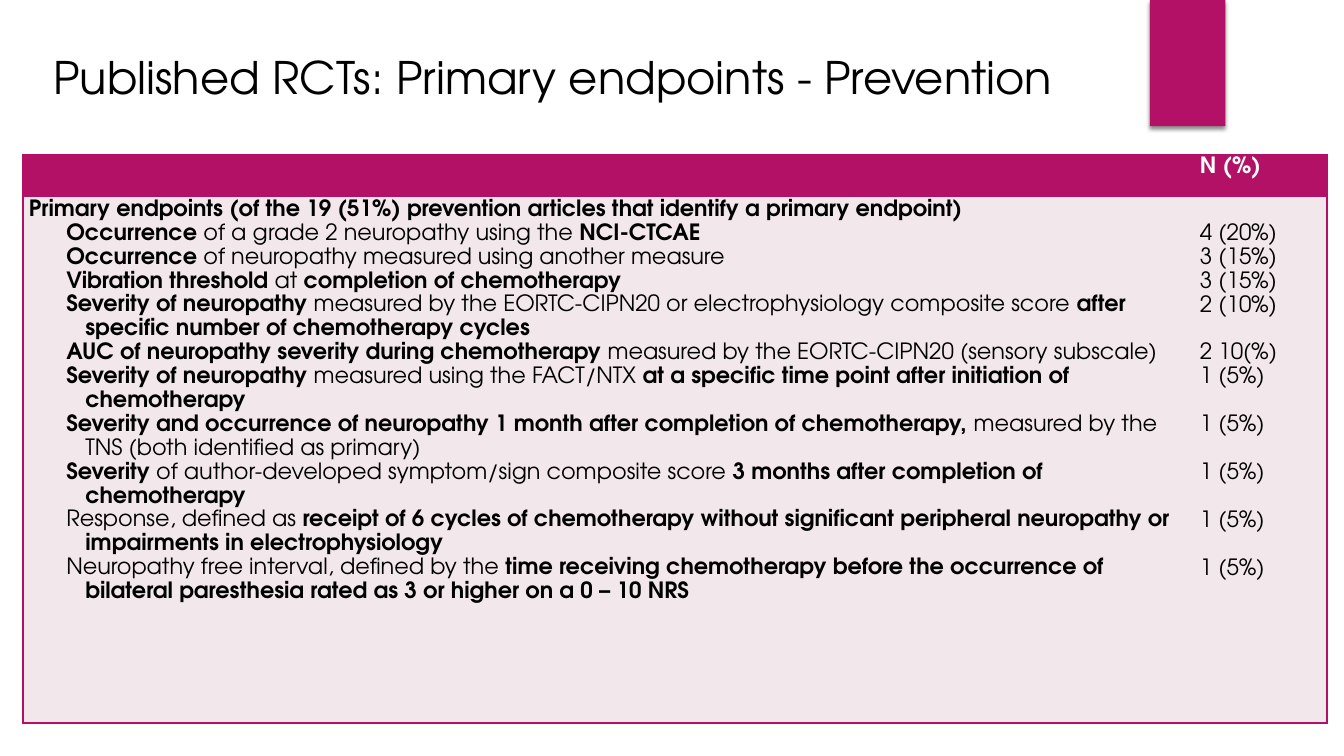
from lxml import etree
from pptx import Presentation
from pptx.dml.color import RGBColor
from pptx.enum.shapes import MSO_SHAPE
from pptx.enum.text import MSO_ANCHOR, PP_ALIGN
from pptx.oxml.ns import qn
from pptx.util import Cm, Pt

RECT = MSO_SHAPE.RECTANGLE
MIDDLE = MSO_ANCHOR.MIDDLE
LEFT = PP_ALIGN.LEFT

FONT = "TeX Gyre Adventor"
PINK, PALE, BLACK, WHITE = "B31166", "F2E7EA", "000000", "FFFFFF"
LINE = 17.1  # height of one table line in points

HEAD = "*Primary endpoints (of the 19 (51%) prevention articles that identify a primary endpoint)*"
# Wording with bold between asterisks, count, and lines the wording takes
ENDPOINTS = [
    ("*Occurrence *of a grade 2 neuropathy using the *NCI-CTCAE*", "4 (20%)", 1),
    ("*Occurrence *of neuropathy measured using another measure", "3 (15%)", 1),
    ("*Vibration threshold *at *completion of chemotherapy*", "3 (15%)", 1),
    ("*Severity of neuropathy *measured by the EORTC-CIPN20 or electrophysiology "
     "composite score *after specific number of chemotherapy cycles*", "2 (10%)", 2),
    ("*AUC of neuropathy severity during chemotherapy *measured by the "
     "EORTC-CIPN20 (sensory subscale)", "2 10(%)", 1),
    ("*Severity of neuropathy *measured using the FACT/NTX* at a specific time point "
     "after initiation of chemotherapy*", "1 (5%)", 2),
    ("*Severity and occurrence of neuropathy 1 month after completion of "
     "chemotherapy, *measured by the TNS (both identified as primary)", "1 (5%)", 2),
    ("*Severity *of author-developed symptom/sign composite score *3 months after "
     "completion of chemotherapy*", "1 (5%)", 2),
    ("Response, defined as *receipt of 6 cycles of chemotherapy without significant "
     "peripheral neuropathy or impairments in electrophysiology*", "1 (5%)", 2),
    ("Neuropathy free interval, defined by the *time receiving chemotherapy before the "
     "occurrence of bilateral paresthesia rated as 3 or higher on a 0 – 10 NRS*", "1 (5%)", 2),
]


def rgb(code):
    return RGBColor.from_string(code)


def write(frame, text, size=16, color=BLACK, first=False, spacing=1.15, before=0, hang=False):
    """Add one paragraph; asterisks switch bold on and off."""
    para = frame.paragraphs[0] if first else frame.add_paragraph()
    para.alignment = LEFT
    para.line_spacing = spacing
    para.space_before = Pt(before)
    if hang:
        props = para._p.get_or_add_pPr()
        props.set("marL", str(Cm(1.42)))
        props.set("indent", str(Cm(-0.48)))
    for i, part in enumerate(text.split("*")):
        if part:
            run = para.add_run()
            run.text = part
            font = run.font
            font.name, font.size, font.bold = FONT, Pt(size), i % 2 == 1
            font.color.rgb = rgb(color)


def paint(cell, fill, sides):
    """Fill a cell and rule only the named sides."""
    props = cell._tc.get_or_add_tcPr()
    for side in "LRTB":
        line = etree.SubElement(props, qn(f"a:ln{side}"), w=str(Pt(1)))
        if side in sides:
            solid = etree.SubElement(line, qn("a:solidFill"))
            etree.SubElement(solid, qn("a:srgbClr"), val=PINK)
        else:
            etree.SubElement(line, qn("a:noFill"))
    cell.fill.solid()
    cell.fill.fore_color.rgb = rgb(fill)
    cell.margin_left = cell.margin_right = Cm(0.15)
    cell.margin_top = cell.margin_bottom = 0


def add_tab(slide, left, top, width, height):
    tab = slide.shapes.add_shape(RECT, left, top, width, height)
    tab.fill.solid()
    tab.fill.fore_color.rgb = rgb(PINK)
    tab.line.fill.background()
    tab.shadow.inherit = False
    effects = tab._element.spPr.find(qn("a:effectLst"))
    shade = etree.SubElement(effects, qn("a:outerShdw"), blurRad=str(Pt(3)),
                             dist=str(Pt(2)), dir="5400000", rotWithShape="0")
    tint = etree.SubElement(shade, qn("a:srgbClr"), val=BLACK)
    etree.SubElement(tint, qn("a:alpha"), val="45000")


def add_title(slide, left, top, width, height):
    title = slide.shapes.title
    title.left, title.top, title.width, title.height = left, top, width, height
    frame = title.text_frame
    frame.word_wrap = True
    frame.vertical_anchor = MIDDLE
    write(frame, "Published RCTs: Primary endpoints - Prevention",
          size=32, first=True, spacing=1)


def add_grid(slide, left, top, width, height):
    table = slide.shapes.add_table(2, 2, left, top, width, height).table
    table.first_row = table.horz_banding = False
    table.columns[1].width = Cm(3.35)
    table.columns[0].width = width - Cm(3.35)
    table.rows[0].height = Cm(1.07)
    table.rows[1].height = height - Cm(1.07)
    for row, fill in enumerate((PINK, PALE)):
        for col, side in enumerate("LR"):
            paint(table.cell(row, col), fill, side + "TB")

    write(table.cell(0, 1).text_frame, "*N (%)*", color=WHITE, first=True)
    names, counts = table.cell(1, 0), table.cell(1, 1)
    counts.margin_top = Pt(LINE)
    write(names.text_frame, HEAD, first=True)
    gap = 0
    for i, (name, count, lines) in enumerate(ENDPOINTS):
        write(names.text_frame, name, hang=True)
        write(counts.text_frame, count, first=i == 0, before=gap)
        gap = (lines - 1) * LINE


def main():
    deck = Presentation()
    deck.slide_width, deck.slide_height = Cm(33.87), Cm(19.05)
    slide = deck.slides.add_slide(deck.slide_layouts[5])
    add_tab(slide, Cm(28.98), 0, Cm(1.9), Cm(3.18))
    add_grid(slide, Cm(0.58), Cm(3.89), Cm(32.86), Cm(14.33))
    add_title(slide, Cm(1.09), Cm(1.12), Cm(26.39), Cm(1.63))
    deck.save("out.pptx")


if __name__ == "__main__":
    main()
